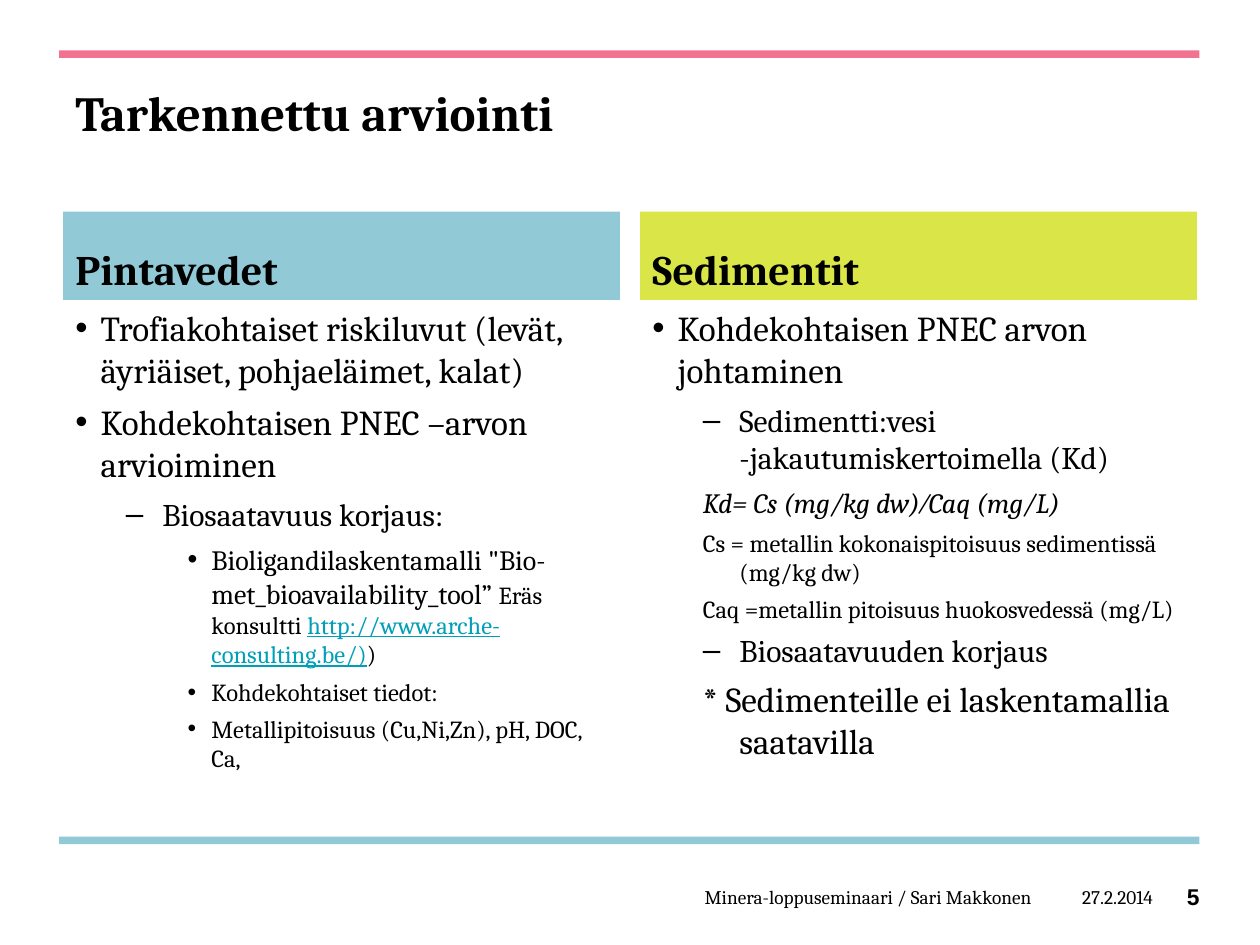
from lxml import etree
from pptx import Presentation
from pptx.dml.color import RGBColor
from pptx.enum import shapes, text
from pptx.oxml import ns
from pptx.util import Inches, Pt

BLACK = RGBColor(0, 0, 0)
PINK = RGBColor(0xF1, 0x73, 0x91)
BLUE = RGBColor(0x92, 0xC9, 0xD7)
LIME = RGBColor(0xDA, 0xE6, 0x48)
TEAL = RGBColor(0x00, 0x9F, 0xB8)

# Column: heading, fill, paragraphs of (level, bullet, runs of (text, size, format))
COLUMNS = [
    ("Pintavedet", BLUE, [
        (0, "•", [("Trofiakohtaiset riskiluvut (levät, äyriäiset, pohjaeläimet, kalat)", 20, {})]),
        (0, "•", [("Kohdekohtaisen PNEC –arvon arvioiminen", 20, {})]),
        (1, "–", [("Biosaatavuus korjaus:", 18, {})]),
        (2, "•", [
            ('Bioligandilaskentamalli "Bio-met_bioavailability_tool” ', 16, {}),
            ("Eräs konsultti ", 14, {}),
            ("http://www.arche-consulting.be/)", 14, {"color": TEAL, "underline": True}),
            (")", 14, {}),
        ]),
        (2, "•", [("Kohdekohtaiset tiedot:", 14, {})]),
        (2, "•", [("Metallipitoisuus (Cu,Ni,Zn), pH, DOC, Ca,", 14, {})]),
    ]),
    ("Sedimentit", LIME, [
        (0, "•", [("Kohdekohtaisen PNEC arvon johtaminen", 20, {})]),
        (1, "–", [("Sedimentti:vesi -jakautumiskertoimella (Kd)", 18, {})]),
        (1, None, [("Kd= Cs (mg/kg dw)⁄Caq (mg/L)", 16, {"italic": True})]),
        (1, None, [("Cs = metallin kokonaispitoisuus sedimentissä (mg/kg dw)", 14, {})]),
        (1, None, [("Caq =metallin pitoisuus huokosvedessä (mg/L)", 14, {})]),
        (1, "–", [("Biosaatavuuden korjaus", 18, {})]),
        (1, None, [("* Sedimenteille ei laskentamallia saatavilla", 20, {})]),
    ]),
]
# Footer: text, left, width, size, format
FOOTER = [
    ("Minera-loppuseminaari / Sari Makkonen", 3.34, 4.85, 11, {}),
    ("27.2.2014", 8.19, 0.96, 11, {}),
    ("5", 9.13, 0.39, 13, {"name": "Arial", "bold": True}),
]
INDENTS = [(0.2, -0.2), (0.69, -0.29), (1.08, -0.19)]
LEFT, WIDTH, STEP = 0.5, 4.42, 4.58
HEAD_TOP, HEAD_TALL, BODY_TALL = 1.68, 0.7, 4.32
AFTER = 0.3  # paragraph gap as a share of the text size

prs = Presentation()
prs.slide_width, prs.slide_height = Inches(10), Inches(7.5)
slide = prs.slides.add_slide(prs.slide_layouts[6])


def add_rect(left, top, width, height, fill):
    rect = slide.shapes.add_shape(
        shapes.MSO_SHAPE.RECTANGLE, *map(Inches, (left, top, width, height)))
    rect.shadow.inherit = False
    rect.fill.solid()
    rect.fill.fore_color.rgb = fill
    rect.line.fill.background()
    return rect


def add_box(left, top, width, height):
    return slide.shapes.add_textbox(*map(Inches, (left, top, width, height)))


def set_frame(shape, anchor=text.MSO_ANCHOR.TOP, insets=(0.1, 0.05, 0.1, 0.05)):
    frame = shape.text_frame
    frame.word_wrap = True
    frame.vertical_anchor = anchor
    for side, inset in zip(("left", "top", "right", "bottom"), insets):
        setattr(frame, "margin_" + side, Inches(inset))
    return frame


def add_run(para, words, size, form):
    run = para.add_run()
    run.text = words
    values = {"name": "Cambria", "size": Pt(size), **form}
    run.font.color.rgb = values.pop("color", BLACK)
    for key, value in values.items():
        setattr(run.font, key, value)


def set_bullet(para, level, mark):
    """Indent the paragraph and give it a bullet, or none."""
    para.level = level
    props = para._p.get_or_add_pPr()
    for key, value in zip(("marL", "indent"), INDENTS[level]):
        props.set(key, str(Inches(value)))
    if mark:
        etree.SubElement(props, ns.qn("a:buFont")).set("typeface", "Arial")
        etree.SubElement(props, ns.qn("a:buChar")).set("char", mark)
    else:
        etree.SubElement(props, ns.qn("a:buNone"))


for top, fill in ((6.64, BLUE), (0.4, PINK)):
    add_rect(0.47, top, 9.05, 0.06, fill)

title = set_frame(add_box(LEFT, 0.6, 9, 0.95)).paragraphs[0]
title.line_spacing = Pt(34)
add_run(title, "Tarkennettu arviointi", 28, {"bold": True})

for col, (heading, fill, paras) in enumerate(COLUMNS):
    left = LEFT + col * STEP
    head = set_frame(add_rect(left, HEAD_TOP, WIDTH, HEAD_TALL, fill),
                     text.MSO_ANCHOR.BOTTOM).paragraphs[0]
    head.alignment = text.PP_ALIGN.LEFT
    add_run(head, heading, 24, {"bold": True})

    body = set_frame(add_box(left, HEAD_TOP + HEAD_TALL, WIDTH, BODY_TALL))
    for row, (level, mark, runs) in enumerate(paras):
        para = body.add_paragraph() if row else body.paragraphs[0]
        set_bullet(para, level, mark)
        para.space_after = Pt(round(AFTER * runs[0][1], 1))
        for run in runs:
            add_run(para, *run)

for words, left, width, size, form in FOOTER:
    para = set_frame(add_box(left, 6.98, width, 0.27),
                     text.MSO_ANCHOR.MIDDLE, (0, 0, 0, 0)).paragraphs[0]
    para.alignment = text.PP_ALIGN.RIGHT
    add_run(para, words, size, form)

prs.save("out.pptx")
